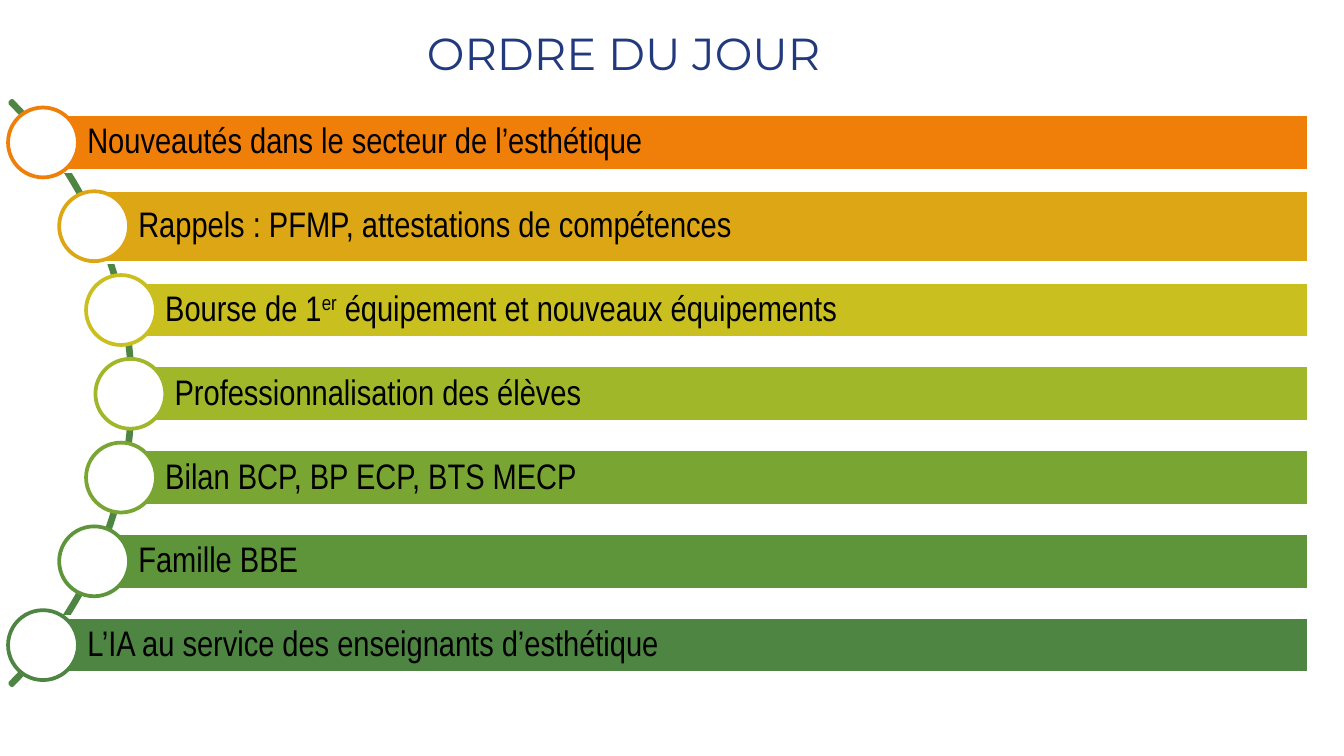
from pptx import Presentation
from pptx.dml.color import RGBColor
from pptx.enum.shapes import MSO_SHAPE
from pptx.enum.text import MSO_ANCHOR, PP_ALIGN
from pptx.util import Inches, Pt

RECT, OVAL, ARC = MSO_SHAPE.RECTANGLE, MSO_SHAPE.OVAL, MSO_SHAPE.BLOCK_ARC
MIDDLE = MSO_ANCHOR.MIDDLE
LEFT, CENTER = PP_ALIGN.LEFT, PP_ALIGN.CENTER

# Content: (text runs, bar colour, bar height); odd runs are superscript
TITLE = "ORDRE DU JOUR"
AGENDA = [
    (["Nouveautés dans le secteur de l’esthétique"], "orange", 0.42),
    (["Rappels : PFMP, attestations de compétences"], "amber", 0.54),
    (["Bourse de 1", "er", " équipement et nouveaux équipements"], "yellow", 0.42),
    (["Professionnalisation des élèves"], "lime", 0.42),
    (["Bilan BCP, BP ECP, BTS MECP"], "leaf", 0.42),
    (["Famille BBE"], "green", 0.42),
    (["L’IA au service des enseignants d’esthétique"], "forest", 0.42),
]
COLORS = {
    "title": "223A7D", "text": "000000", "white": "FFFFFF",
    "orange": "F07F09", "amber": "DCA615", "yellow": "C9C01F", "lime": "9FB729",
    "leaf": "79A532", "green": "5E953B", "forest": "4E8542",
}

# Layout: bar starts by distance from the middle row
BAR_LEFTS = [0.97, 0.9, 0.7, 0.32]
BAR_RIGHT = 9.74
FIRST_Y, LAST_Y = 1.06, 4.8
CIRCLE = 0.52


def rgb(name):
    return RGBColor.from_string(COLORS[name])


def add_shape(kind, x, y, w, h, fill, line):
    sp = slide.shapes.add_shape(kind, Inches(x), Inches(y), Inches(w), Inches(h))
    sp.shadow.inherit = False
    if fill:
        sp.fill.solid()
        sp.fill.fore_color.rgb = rgb(fill)
    else:
        sp.fill.background()
    sp.line.color.rgb = rgb(line)
    sp.line.width = Pt(2)
    return sp


def add_runs(p, texts, font, size, color):
    for i, text in enumerate(texts):
        r = p.add_run()
        r.text = text
        r.font.name, r.font.size = font, Pt(size)
        r.font.color.rgb = rgb(color)
        if i % 2:
            r.font._element.set("baseline", "30000")


# Widescreen slide, 16:9
prs = Presentation()
prs.slide_width = Inches(10)
prs.slide_height = Inches(10 * 9 / 16)
slide = prs.slides.add_slide(prs.slide_layouts[6])

# Title
box = slide.shapes.add_textbox(Inches(1.36), Inches(0.14), Inches(6.56), Inches(0.5))
box.text_frame.word_wrap = True
p = box.text_frame.paragraphs[0]
p.alignment = CENTER
add_runs(p, [TITLE], "Montserrat", 24, "title")

# Arc behind the circles
arc = add_shape(ARC, -5.16, -0.15, 6.15, 6.15, None, "forest")
for i, value in enumerate([189, 27, 0.0035]):
    arc.adjustments[i] = value

# Agenda bars, each with a circle centred on its left edge
middle = len(AGENDA) // 2
step = (LAST_Y - FIRST_Y) / (len(AGENDA) - 1)
for i, (texts, color, height) in enumerate(AGENDA):
    x, y = BAR_LEFTS[abs(i - middle)], FIRST_Y + i * step
    bar = add_shape(RECT, x, y - height / 2, BAR_RIGHT - x, height, color, "white")
    tf = bar.text_frame
    tf.word_wrap = True
    tf.vertical_anchor = MIDDLE
    tf.margin_left = Inches(0.33)
    tf.margin_right = tf.margin_top = tf.margin_bottom = Inches(0.05)
    p = tf.paragraphs[0]
    p.alignment = LEFT
    p.line_spacing = 0.9
    add_runs(p, texts, "Arial Narrow", 19, "text")
    add_shape(OVAL, x - CIRCLE / 2, y - CIRCLE / 2, CIRCLE, CIRCLE, "white", color)

prs.save("out.pptx")
